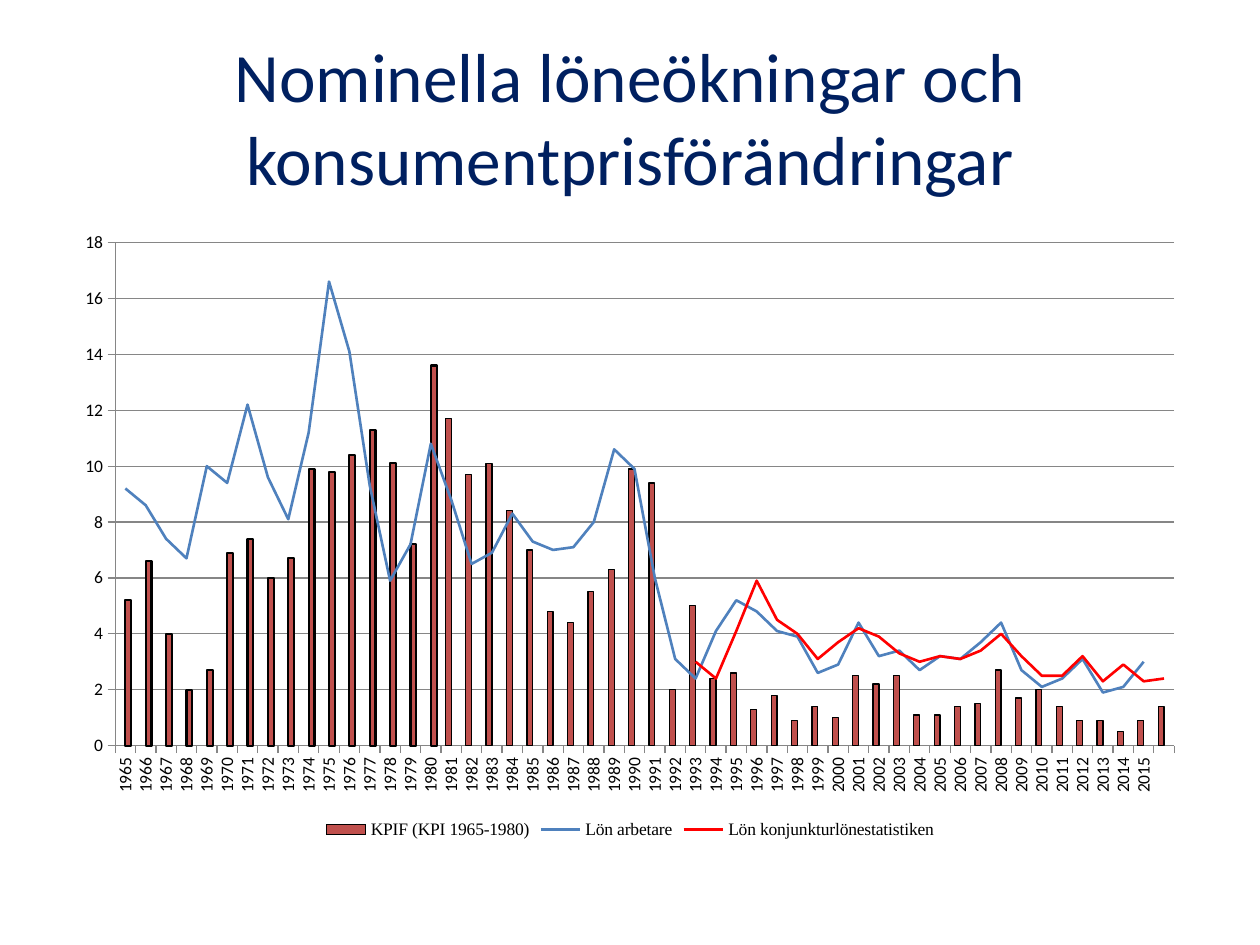
"""Build a slide with a combined chart of Swedish wage and price changes."""
from dataclasses import dataclass

from pptx import Presentation
from pptx import util as u
from pptx.chart import data as cd
from pptx.chart.chart import Chart
from pptx.dml.color import RGBColor
from pptx.enum import chart as ce
from pptx.enum import text
from pptx.oxml import xmlchemy as xc

NAVY = RGBColor(0x00, 0x20, 0x60)
BLACK = RGBColor(0x00, 0x00, 0x00)
GREY = RGBColor(0x86, 0x86, 0x86)
BRICK = RGBColor(0xC0, 0x50, 0x4D)
BLUE = RGBColor(0x4F, 0x81, 0xBD)
RED = RGBColor(0xFF, 0x00, 0x00)
YEARS = [str(year) for year in range(1965, 2016)] + [""]


@dataclass(frozen=True)
class Row:
    """One series with its first year and outline."""
    name: str
    start: int
    vals: tuple[float, ...]
    line: RGBColor
    width: float


BARS = [
    Row("KPIF (KPI 1965-1980)", 1981, (
        11.7, 9.7, 10.1, 8.4, 7, 4.8, 4.4, 5.5, 6.3, 9.9, 9.4, 2, 5, 2.4, 2.6, 1.3, 1.8, 0.9,
        1.4, 1, 2.5, 2.2, 2.5, 1.1, 1.1, 1.4, 1.5, 2.7, 1.7, 2, 1.4, 0.9, 0.9, 0.5, 0.9, 1.4,
    ), BLACK, 0.75),
    Row("Series 2", 1965, (
        5.2, 6.6, 4, 2, 2.7, 6.9, 7.4, 6, 6.7, 9.9, 9.8, 10.4, 11.3, 10.1, 7.2, 13.6,
    ), BLACK, 1.25),
]
LINES = [
    Row("Lön arbetare", 1965, (
        9.2, 8.6, 7.4, 6.7, 10, 9.4, 12.2, 9.6, 8.1, 11.2, 16.6, 14.1, 9.3, 5.9, 7.2, 10.8, 8.8,
        6.5, 6.9, 8.3, 7.3, 7, 7.1, 8, 10.6, 9.9, 6, 3.1, 2.4, 4.1, 5.2, 4.8, 4.1, 3.9, 2.6,
        2.9, 4.4, 3.2, 3.4, 2.7, 3.2, 3.1, 3.7, 4.4, 2.7, 2.1, 2.4, 3.1, 1.9, 2.1, 3,
    ), BLUE, 1.5),
    Row("Lön konjunkturlönestatistiken", 1993, (
        3, 2.4, 4.1, 5.9, 4.5, 4, 3.1, 3.7, 4.2, 3.9, 3.3, 3, 3.2, 3.1, 3.4, 4, 3.2, 2.5, 2.5,
        3.2, 2.3, 2.9, 2.3, 2.4,
    ), RED, 1.5),
]


def node(tag: str, val: object = None) -> xc.BaseOxmlElement:
    """Make a chart element with an optional value."""
    item = xc.OxmlElement(f"c:{tag}")
    if val is not None:
        item.set("val", str(val))
    return item


def add_title(slide, words: str) -> None:
    """Add the centred heading."""
    box = slide.shapes.add_textbox(u.Cm(1.27), u.Cm(0.76), u.Cm(22.86), u.Cm(3.18))
    frame = box.text_frame
    frame.word_wrap = True
    frame.vertical_anchor = text.MSO_ANCHOR.MIDDLE
    frame.text = words
    para = frame.paragraphs[0]
    para.alignment = text.PP_ALIGN.CENTER
    font = para.runs[0].font
    font.name, font.size = "Calibri", u.Pt(39.6)
    font.color.rgb = NAVY


def split_lines(chart: Chart) -> None:
    """Move the wage series from the bar plot to a line plot."""
    bars = chart.plots[0]
    group = node("lineChart")
    group.append(node("grouping", "standard"))
    group.append(node("varyColors", 0))
    for series in list(bars.series)[len(BARS):]:
        ser = series._element
        for flag in ser.findall(node("invertIfNegative").tag):
            ser.remove(flag)
        group.append(ser)
    group.append(node("marker", 1))
    for axis in (chart.category_axis, chart.value_axis):
        ident = axis._element.find(node("axId").tag).get("val")
        group.append(node("axId", ident))
    bars._element.addnext(group)


def style_plots(chart: Chart) -> None:
    """Set the bar and line formats."""
    bars, lines = chart.plots
    bars.gap_width, bars.overlap, bars.vary_by_categories = 150, 0, False
    for plot, rows in ((bars, BARS), (lines, LINES)):
        for series, row in zip(plot.series, rows):
            series.format.line.color.rgb = row.line
            series.format.line.width = u.Pt(row.width)
    for series in bars.series:
        series.format.fill.solid()
        series.format.fill.fore_color.rgb = BRICK
        series.invert_if_negative = False
    for series in lines.series:
        series.smooth = False
        series.marker.style = ce.XL_MARKER_STYLE.NONE


def style_axes(chart: Chart) -> None:
    """Set the scale, grid, ticks and label angle."""
    years, scale = chart.category_axis, chart.value_axis
    scale.minimum_scale, scale.maximum_scale, scale.major_unit = 0, 18, 2
    scale.has_major_gridlines = True
    scale.tick_labels.number_format = "#,##0"
    scale.tick_labels.number_format_is_linked = False
    for part in (years, scale, scale.major_gridlines):
        part.format.line.color.rgb = GREY
        part.format.line.width = u.Pt(0.75)
    for axis in (years, scale):
        axis.major_tick_mark = ce.XL_TICK_MARK.OUTSIDE
        font = axis.tick_labels.font
        font.name, font.size = "Calibri", u.Pt(10)
        font.color.rgb = BLACK
    body = years._element.txPr.bodyPr
    body.set("rot", "-5400000")
    body.set("vert", "horz")


def style_legend(chart: Chart) -> None:
    """Place the legend and hide the early price bars in it."""
    chart.has_legend = True
    legend = chart.legend
    legend.position = ce.XL_LEGEND_POSITION.BOTTOM
    legend.include_in_layout = False
    legend.font.name, legend.font.size = "Times New Roman", u.Pt(10)
    legend.font.color.rgb = BLACK
    entry = node("legendEntry")
    entry.extend([node("idx", 1), node("delete", 1)])
    legend._element.find(node("legendPos").tag).addnext(entry)


def place_plot(chart: Chart) -> None:
    """Fix the inner plot area as shares of the chart."""
    area = chart.plots[0]._element.getparent()
    for old in area.findall(node("layout").tag):
        area.remove(old)
    frame, layout = node("manualLayout"), node("layout")
    frame.append(node("layoutTarget", "inner"))
    frame.extend([node("xMode", "edge"), node("yMode", "edge")])
    for key, share in {"x": 0.046, "y": 0.035, "w": 0.934, "h": 0.807}.items():
        frame.append(node(key, share))
    layout.append(frame)
    area.insert(0, layout)


def add_graph(slide) -> None:
    """Add the combined bar and line chart."""
    data = cd.CategoryChartData()
    data.categories = YEARS
    for row in BARS + LINES:
        lead = [None] * (row.start - 1965)
        tail = [None] * (len(YEARS) - len(lead) - len(row.vals))
        data.add_series(row.name, [*lead, *row.vals, *tail])
    chart = slide.shapes.add_chart(
        ce.XL_CHART_TYPE.COLUMN_CLUSTERED,
        u.Cm(1.27), u.Cm(4.45), u.Cm(22.86), u.Cm(12.57), data).chart
    chart.has_title = False
    chart.font.name, chart.font.size = "Calibri", u.Pt(10)
    chart.font.color.rgb = BLACK
    split_lines(chart)
    style_plots(chart)
    style_axes(chart)
    style_legend(chart)
    place_plot(chart)


def main() -> None:
    """Build and save the slide."""
    deck = Presentation()
    deck.slide_width, deck.slide_height = u.Cm(25.4), u.Cm(19.05)
    slide = deck.slides.add_slide(deck.slide_layouts[6])
    add_title(slide, "Nominella löneökningar och konsumentprisförändringar")
    add_graph(slide)
    deck.save("out.pptx")


if __name__ == "__main__":
    main()
